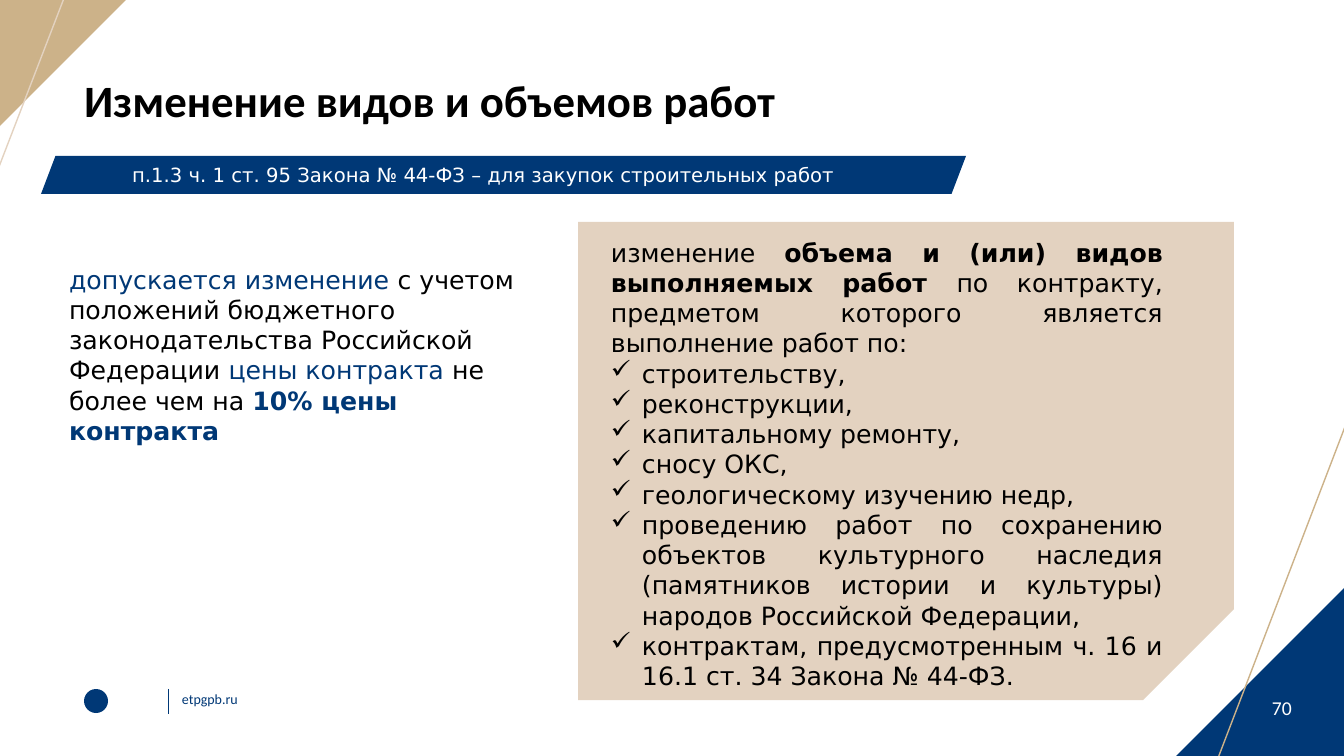
from lxml import etree
from pptx import Presentation
from pptx.dml.color import RGBColor
from pptx.enum.shapes import MSO_CONNECTOR, MSO_SHAPE as Preset
from pptx.enum.text import MSO_ANCHOR as Anchor, MSO_AUTO_SIZE as AutoSize, PP_ALIGN as Align
from pptx.oxml.ns import qn
from pptx.util import Pt

EMU_PER_PX = 12192000 / 1344
NAVY = RGBColor(0x00, 0x38, 0x76)
GOLD = RGBColor(0xCC, 0xB2, 0x89)
SAND = RGBColor(0xE3, 0xD2, 0xC0)
BLACK = RGBColor(0, 0, 0)
WHITE = RGBColor(0xFF, 0xFF, 0xFF)
HEAD_FONT = "Calibri"
BODY_FONT = "DejaVu Sans"
NO_INSETS = (0, 0, 0, 0)
BODY_INSETS = (10, 5, 10, 5)
BANNER_INSETS = (8, 4, 8, 4)
BULLET_INDENT = 31

WORK_TYPES = [
    "строительству,",
    "реконструкции,",
    "капитальному ремонту,",
    "сносу ОКС,",
    "геологическому изучению недр,",
    "проведению работ по сохранению объектов культурного наследия "
    "(памятников истории и культуры) народов Российской Федерации,",
    "контрактам, предусмотренным ч. 16 и 16.1 ст. 34 Закона № 44-ФЗ.",
]


def px(*lengths):
    return [round(length * EMU_PER_PX) for length in lengths]


def apply_format(target, values):
    for name, value in values.items():
        setattr(target, name, value)


def add_span(para, text, color, size, face=BODY_FONT, bold=False):
    span = para.add_run()
    span.text = text
    apply_format(span.font, {"name": face, "size": Pt(size), "bold": bold})
    span.font.color.rgb = color


def format_frame(frame, insets, anchor=Anchor.TOP):
    left, top, right, bottom = px(*insets)
    apply_format(frame, {
        "word_wrap": True, "auto_size": AutoSize.NONE, "vertical_anchor": anchor,
        "margin_left": left, "margin_top": top,
        "margin_right": right, "margin_bottom": bottom,
    })


def add_text(page, place, insets=NO_INSETS, anchor=Anchor.TOP, align=Align.LEFT):
    box = page.shapes.add_textbox(*px(*place))
    format_frame(box.text_frame, insets, anchor)
    para = box.text_frame.paragraphs[0]
    para.alignment = align
    return para, box.text_frame


def add_panel(page, preset, place, color, rotation=0, adjustment=None):
    panel = page.shapes.add_shape(preset, *px(*place))
    panel.shadow.inherit = False
    panel.fill.solid()
    panel.fill.fore_color.rgb = color
    panel.line.fill.background()
    panel.rotation = rotation
    if adjustment is not None:
        panel.adjustments[0] = adjustment
    return panel


def add_line(page, ends, color, width):
    line = page.shapes.add_connector(MSO_CONNECTOR.STRAIGHT, *px(*ends))
    line.line.color.rgb = color
    line.line.width = Pt(width)
    etree.SubElement(line._element.spPr, qn("a:effectLst"))


def add_bullet(para):
    properties = para._p.get_or_add_pPr()
    indent = px(BULLET_INDENT)[0]
    properties.set("marL", str(indent))
    properties.set("indent", str(-indent))
    etree.SubElement(properties, qn("a:buChar")).set("char", "✓")


def add_corners(page):
    add_panel(page, Preset.ISOSCELES_TRIANGLE, (1175, 588, 169, 169), NAVY, adjustment=1)
    add_line(page, (1348, 419, 1215, 766), GOLD, 1)
    add_panel(page, Preset.ISOSCELES_TRIANGLE, (0, 0, 126, 126), GOLD, 180, 1)
    add_line(page, (66, -7, -5, 177), SAND, 1)


def add_footer(page):
    number, _ = add_text(page, (1241, 683, 82, 36), anchor=Anchor.BOTTOM, align=Align.CENTER)
    add_span(number, "70", WHITE, 14, HEAD_FONT)
    add_panel(page, Preset.OVAL, (84, 689, 24, 24), NAVY)
    add_line(page, (168, 689, 168, 714), NAVY, 0.5)
    address, _ = add_text(page, (182, 691, 111, 17))
    add_span(address, "etpgpb.ru", NAVY, 10, HEAD_FONT)


def add_heading(page):
    title = page.shapes.title
    left, top, width, height = px(84, 79, 1175, 48)
    apply_format(title, {"left": left, "top": top, "width": width, "height": height})
    format_frame(title.text_frame, NO_INSETS)
    para = title.text_frame.paragraphs[0]
    apply_format(para, {"alignment": Align.LEFT, "line_spacing": 0.9})
    add_span(para, "Изменение видов и объемов работ", BLACK, 32, HEAD_FONT, True)


def add_banner(page):
    banner = add_panel(page, Preset.PARALLELOGRAM, (41, 156, 925, 38), NAVY, adjustment=0.38)
    format_frame(banner.text_frame, BANNER_INSETS, Anchor.MIDDLE)
    para = banner.text_frame.paragraphs[0]
    para.alignment = Align.LEFT
    add_span(para, "п.1.3 ч. 1 ст. 95 Закона № 44-ФЗ – для закупок строительных работ", WHITE, 14)


def add_price_rule(page):
    para, _ = add_text(page, (59, 259, 503, 194), BODY_INSETS)
    for text, color, bold in [
        ("допускается изменение ", NAVY, False),
        ("с учетом положений бюджетного законодательства Российской Федерации ", BLACK, False),
        ("цены контракта ", NAVY, False),
        ("не более чем на ", BLACK, False),
        ("10% цены контракта", NAVY, True),
    ]:
        add_span(para, text, color, 18, bold=bold)


def add_work_types(page):
    add_panel(page, Preset.SNIP_1_RECTANGLE, (667, 133, 478, 656), SAND, 90, 0.19)
    para, frame = add_text(page, (601, 232, 572, 468), BODY_INSETS, align=Align.JUSTIFY)
    for text, bold in [
        ("изменение ", False),
        ("объема и (или) видов выполняемых работ ", True),
        ("по контракту, предметом которого является выполнение работ по:", False),
    ]:
        add_span(para, text, BLACK, 18, bold=bold)
    for work_type in WORK_TYPES:
        para = frame.add_paragraph()
        add_bullet(para)
        para.alignment = Align.JUSTIFY
        add_span(para, work_type, BLACK, 18)


def main():
    deck = Presentation()
    deck.slide_width, deck.slide_height = px(1344, 756)
    page = deck.slides.add_slide(deck.slide_layouts[5])
    add_corners(page)
    add_footer(page)
    add_heading(page)
    add_banner(page)
    add_price_rule(page)
    add_work_types(page)
    deck.save("out.pptx")


if __name__ == "__main__":
    main()
